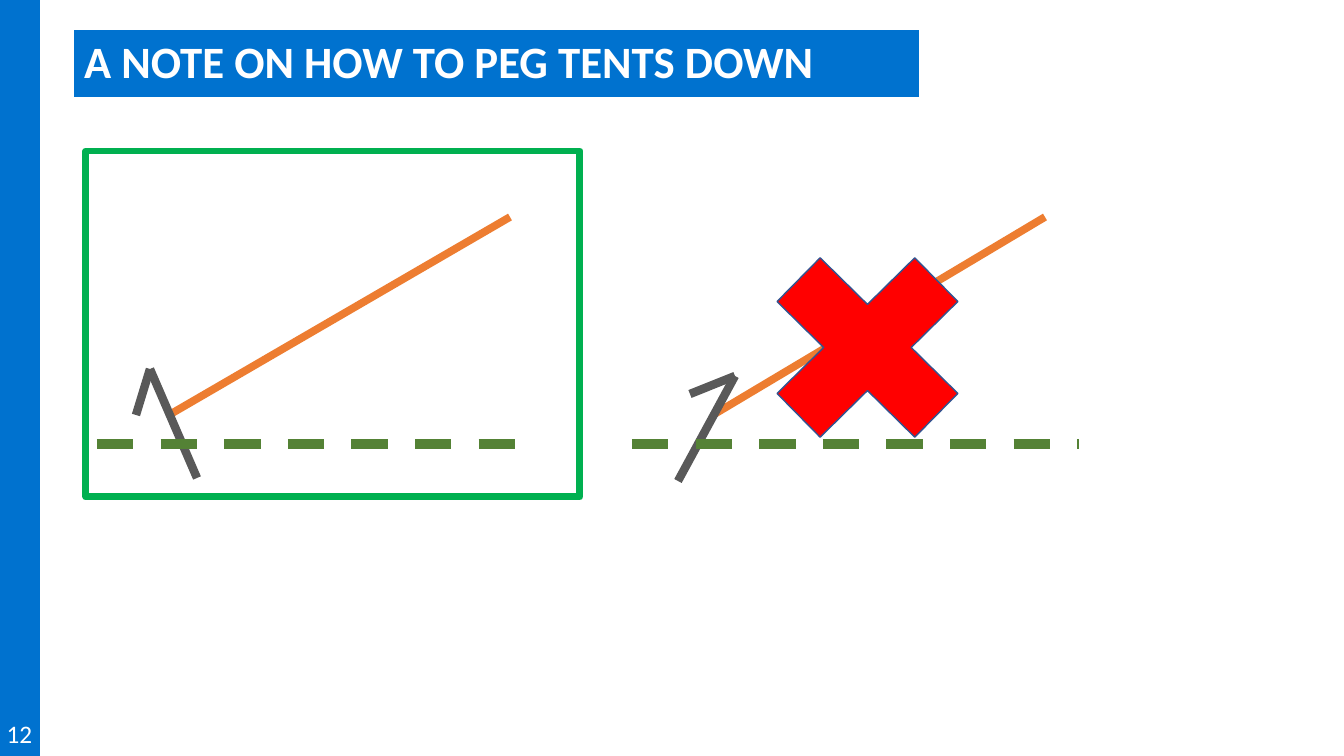
"""Build the slide on how to peg tents down."""
from lxml import etree
from pptx import Presentation
from pptx.dml.color import RGBColor
from pptx.enum import dml, shapes, text
from pptx.oxml.ns import qn
from pptx.util import Emu, Pt

TITLE = "A NOTE ON HOW TO PEG TENTS DOWN"
PAGE = "12"
BLUE, WHITE = "0072CF", "FFFFFF"
TITLE_BOX = (74, 30, 845, 67)
PAGE_BOX = (-7, 713, 53, 40)
SIDEBAR = (0, 0, 40, 756)
FRAME = (86, 151, 494, 346)
CROSS = (735, 217, 265, 261)
TITLE_FONT = {"name": "Calibri", "size": Pt(32), "bold": True}
PAGE_FONT = {"name": "Calibri", "size": Pt(18), "bold": False}
STYLES = {
    "rope": ("ED7D31", 5.5, None),
    "peg": ("595959", 6, None),
    "ground": ("548235", 6.5, dml.MSO_LINE.DASH),
}
LINES = [
    ("rope", (169, 415), (510, 217)),
    ("peg", (150, 369), (197, 478)),
    ("peg", (150, 369), (136, 415)),
    ("ground", (97, 444), (542, 444)),
    ("rope", (713, 415), (1045, 217)),
    ("peg", (735, 376), (678, 481)),
    ("peg", (735, 376), (690, 394)),
    ("ground", (632, 444), (1079, 444)),
]


def px(*lengths):
    return [Emu(round(n * 914400 / 100.8)) for n in lengths]


def rgb(value):
    return RGBColor.from_string(value)


def set_line(line, color, width):
    line.color.rgb = rgb(color)
    line.width = Pt(width)


def write(tf, content, font, align):
    tf.text = content
    p = tf.paragraphs[0]
    p.alignment = align
    r = p.runs[0]
    for key, value in font.items():
        setattr(r.font, key, value)
    r.font.color.rgb = rgb(WHITE)
    return p


def add_box(s, kind, box, fill=None, line=None):
    sp = s.shapes.add_shape(kind, *px(*box))
    sp.shadow.inherit = False
    if fill:
        sp.fill.solid()
        sp.fill.fore_color.rgb = rgb(fill)
    else:
        sp.fill.background()
    if line:
        set_line(sp.line, *line)
    else:
        sp.line.fill.background()


def add_line(s, style, start, end):
    color, width, dash = STYLES[style]
    cxn = s.shapes.add_connector(shapes.MSO_CONNECTOR.STRAIGHT, *px(*start, *end))
    set_line(cxn.line, color, width)
    if dash:
        cxn.line.dash_style = dash
    etree.SubElement(cxn._element.spPr, qn("a:effectLst"))


def add_title(s):
    sp = s.shapes.title
    sp.left, sp.top, sp.width, sp.height = px(*TITLE_BOX)
    sp.fill.solid()
    sp.fill.fore_color.rgb = rgb(BLUE)
    tf = sp.text_frame
    tf.vertical_anchor = text.MSO_ANCHOR.MIDDLE
    tf.auto_size = text.MSO_AUTO_SIZE.NONE
    write(tf, TITLE, TITLE_FONT, text.PP_ALIGN.LEFT).line_spacing = 0.9


def add_page_number(s):
    tf = s.shapes.add_textbox(*px(*PAGE_BOX)).text_frame
    tf.word_wrap = True
    write(tf, PAGE, PAGE_FONT, text.PP_ALIGN.CENTER)


def main():
    prs = Presentation()
    prs.slide_width, prs.slide_height = px(1344, 756)
    s = prs.slides.add_slide(prs.slide_layouts[5])
    kinds = shapes.MSO_SHAPE
    add_box(s, kinds.RECTANGLE, SIDEBAR, fill=BLUE)
    add_page_number(s)
    add_title(s)
    for style, start, end in LINES:
        add_line(s, style, start, end)
    add_box(s, kinds.RECTANGLE, FRAME, line=("00B050", 5))
    add_box(s, kinds.MATH_MULTIPLY, CROSS, fill="FF0000", line=("325491", 1))
    prs.save("out.pptx")


if __name__ == "__main__":
    main()
